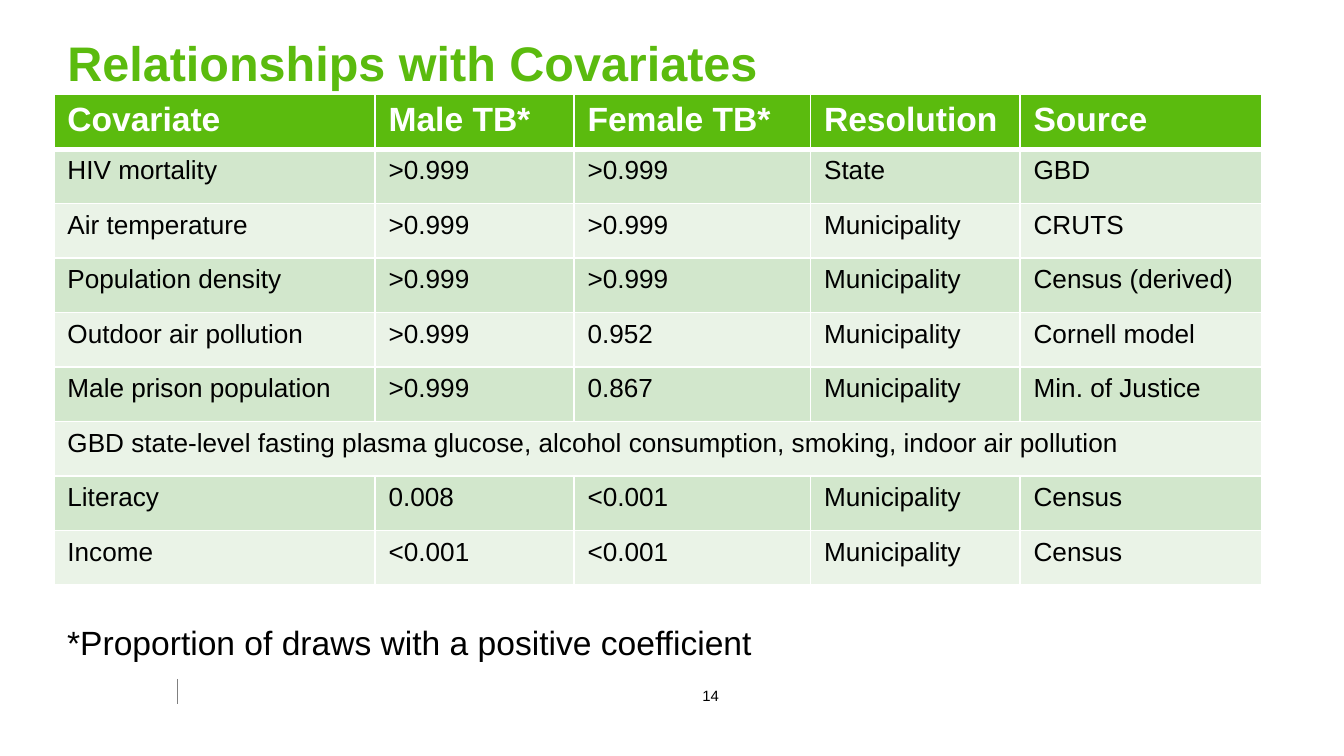
from dataclasses import dataclass

from lxml.etree import SubElement
from pptx import Presentation
from pptx.dml.color import RGBColor
from pptx.enum.shapes import MSO_CONNECTOR
from pptx.enum.text import MSO_ANCHOR, MSO_AUTO_SIZE, PP_ALIGN
from pptx.oxml.ns import qn
from pptx.util import Cm, Pt


@dataclass(frozen=True)
class Theme:
    font: str = "Arial"
    green: str = "5BBB0E"
    band_dark: str = "D2E7CC"
    band_light: str = "EAF3E7"
    white: str = "FFFFFF"
    black: str = "000000"
    gray: str = "808080"
    title_size: float = 26
    large_size: float = 18
    body_size: float = 14
    small_size: float = 8


THEME = Theme()

COLUMN_WIDTHS = [6.07, 3.76, 4.47, 3.96, 4.57]
ROW_HEIGHT = 1.03
ROWS = [
    ["Covariate", "Male TB*", "Female TB*", "Resolution", "Source"],
    ["HIV mortality", ">0.999", ">0.999", "State", "GBD"],
    ["Air temperature", ">0.999", ">0.999", "Municipality", "CRUTS"],
    ["Population density", ">0.999", ">0.999", "Municipality", "Census (derived)"],
    ["Outdoor air pollution", ">0.999", "0.952", "Municipality", "Cornell model"],
    ["Male prison population", ">0.999", "0.867", "Municipality", "Min. of Justice"],
    ["GBD state-level fasting plasma glucose, alcohol consumption, smoking, "
     "indoor air pollution"],
    ["Literacy", "0.008", "<0.001", "Municipality", "Census"],
    ["Income", "<0.001", "<0.001", "Municipality", "Census"],
]


def write_text(text_frame, text, size, color=THEME.black, bold=False,
               align=PP_ALIGN.LEFT):
    paragraph = text_frame.paragraphs[0]
    paragraph.alignment = align
    run = paragraph.add_run()
    run.text = text
    run.font.name = THEME.font
    run.font.size = Pt(size)
    run.font.bold = bold
    run.font.color.rgb = RGBColor.from_string(color)


def set_borders(cell, color, bottom_width=1):
    properties = cell._tc.get_or_add_tcPr()
    for side, width in (("L", 1), ("R", 1), ("T", 1), ("B", bottom_width)):
        line = SubElement(properties, qn(f"a:ln{side}"), w=str(Pt(width)))
        fill = SubElement(line, qn("a:solidFill"))
        SubElement(fill, qn("a:srgbClr"), val=color)


class SlideBuilder:
    def __init__(self, slide, theme):
        self.slide = slide
        self.theme = theme

    def title(self, text, left, top, width, height):
        shape = self.slide.shapes.title
        shape.left, shape.top = Cm(left), Cm(top)
        shape.width, shape.height = Cm(width), Cm(height)
        shape.text_frame.auto_size = MSO_AUTO_SIZE.NONE
        shape.text_frame.vertical_anchor = MSO_ANCHOR.MIDDLE
        write_text(shape.text_frame, text, self.theme.title_size,
                   color=self.theme.green, bold=True)

    def text(self, text, left, top, width, height, **text_format):
        shape = self.slide.shapes.add_textbox(Cm(left), Cm(top), Cm(width), Cm(height))
        shape.text_frame.word_wrap = False
        shape.text_frame.auto_size = MSO_AUTO_SIZE.SHAPE_TO_FIT_TEXT
        write_text(shape.text_frame, text, **text_format)

    def vertical_line(self, left, top, height):
        line = self.slide.shapes.add_connector(
            MSO_CONNECTOR.STRAIGHT, Cm(left), Cm(top), Cm(left), Cm(top + height))
        line.line.color.rgb = RGBColor.from_string(self.theme.gray)
        line.line.width = Pt(0.25)
        SubElement(line._element.spPr, qn("a:effectLst"))

    def table(self, rows, widths, left, top, height):
        frame = self.slide.shapes.add_table(
            len(rows), len(widths), Cm(left), Cm(top), Cm(sum(widths)), Cm(height))
        table = frame.table
        for column, width in zip(table.columns, widths):
            column.width = Cm(width)
        for row_index, values in enumerate(rows):
            table.rows[row_index].height = Cm(ROW_HEIGHT)
            for column_index in range(len(widths)):
                self.style_cell(table.cell(row_index, column_index), row_index)
            if len(values) == 1:
                table.cell(row_index, 0).merge(table.cell(row_index, len(widths) - 1))
            for column_index, value in enumerate(values):
                header = row_index == 0
                write_text(
                    table.cell(row_index, column_index).text_frame, value,
                    self.theme.large_size if header else self.theme.body_size,
                    color=self.theme.white if header else self.theme.black,
                    bold=header)
        # The last row takes up the height left over
        frame.height = Cm(height)

    def style_cell(self, cell, row_index):
        if row_index == 0:
            color = self.theme.green
        else:
            color = self.theme.band_dark if row_index % 2 else self.theme.band_light
        set_borders(cell, self.theme.white, bottom_width=3 if row_index == 0 else 1)
        cell.fill.solid()
        cell.fill.fore_color.rgb = RGBColor.from_string(color)


def main():
    presentation = Presentation()
    presentation.slide_width = Cm(25.4)
    presentation.slide_height = Cm(14.29)
    slide = presentation.slides.add_slide(presentation.slide_layouts[5])
    builder = SlideBuilder(slide, THEME)

    # Footer rule and title
    builder.vertical_line(3.35, 12.83, 0.48)
    builder.title("Relationships with Covariates", 1.02, 0.48, 22.76, 1.37)

    # Covariate table
    builder.table(ROWS, COLUMN_WIDTHS, 1.02, 1.79, 9.68)

    # Page number and footnote
    builder.text("14", 13, 12.85, 0.86, 0.61,
                 size=THEME.small_size, align=PP_ALIGN.CENTER)
    builder.text("*Proportion of draws with a positive coefficient",
                 1.02, 11.63, 13.92, 1.02, size=THEME.large_size)

    presentation.save("out.pptx")


if __name__ == "__main__":
    main()
